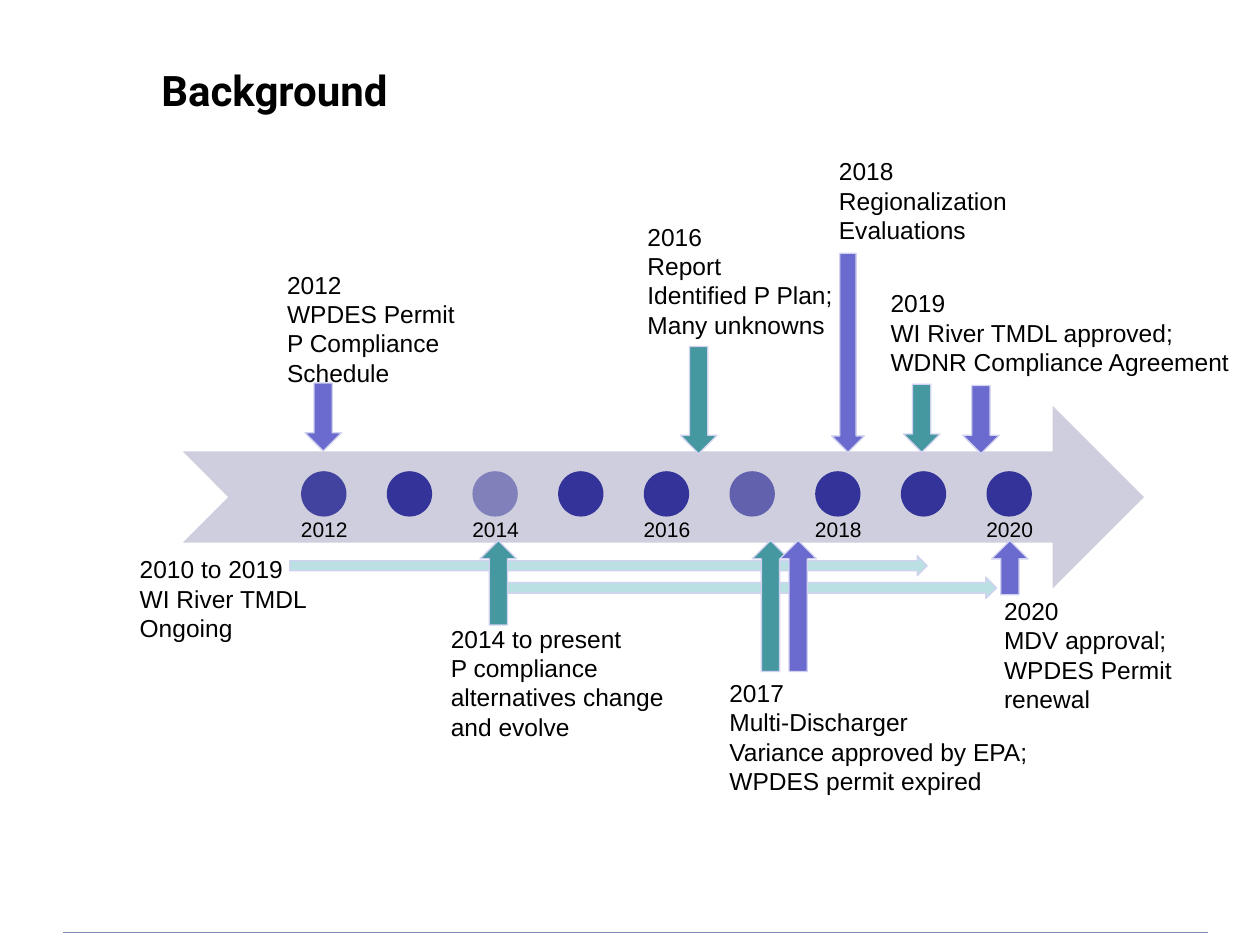
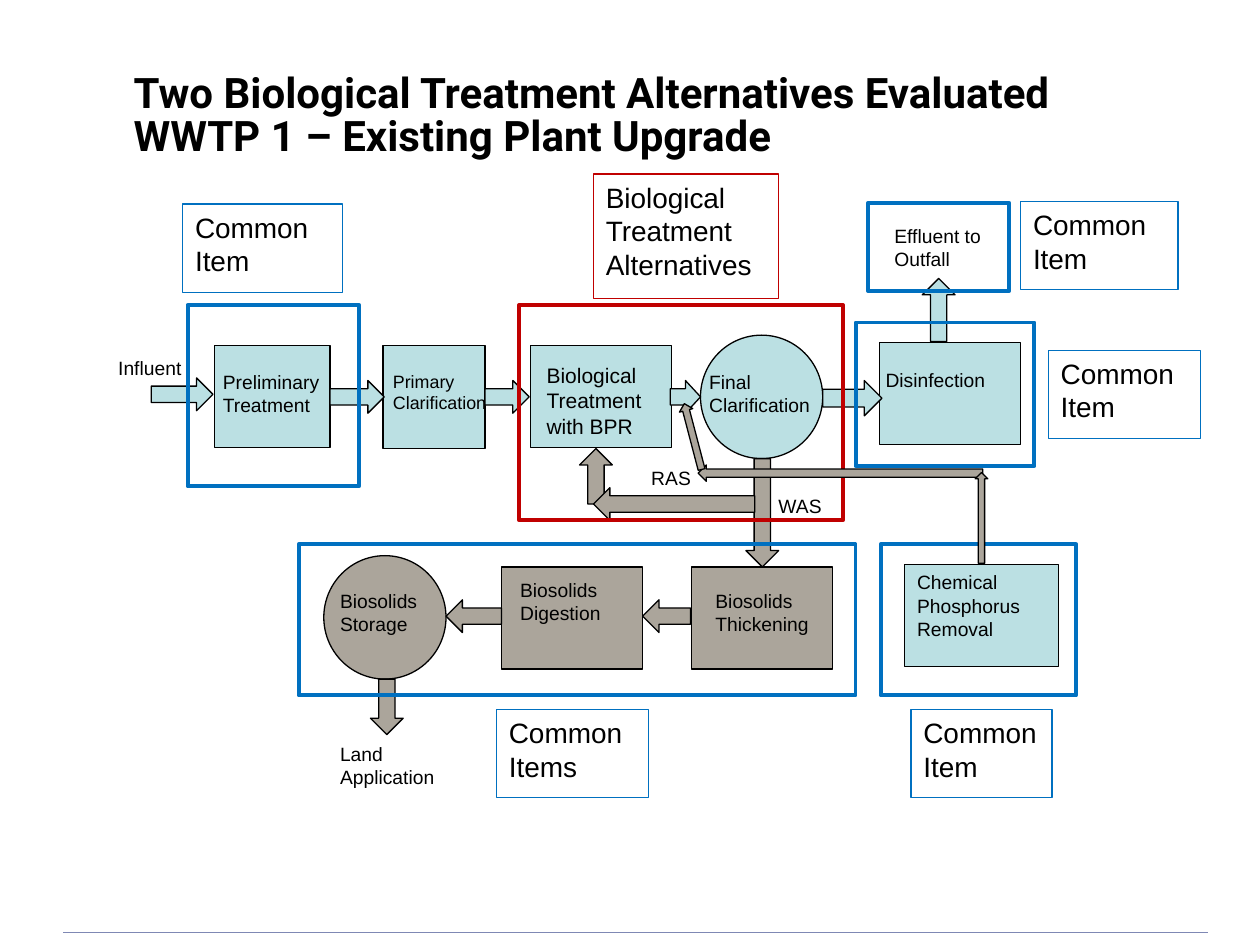
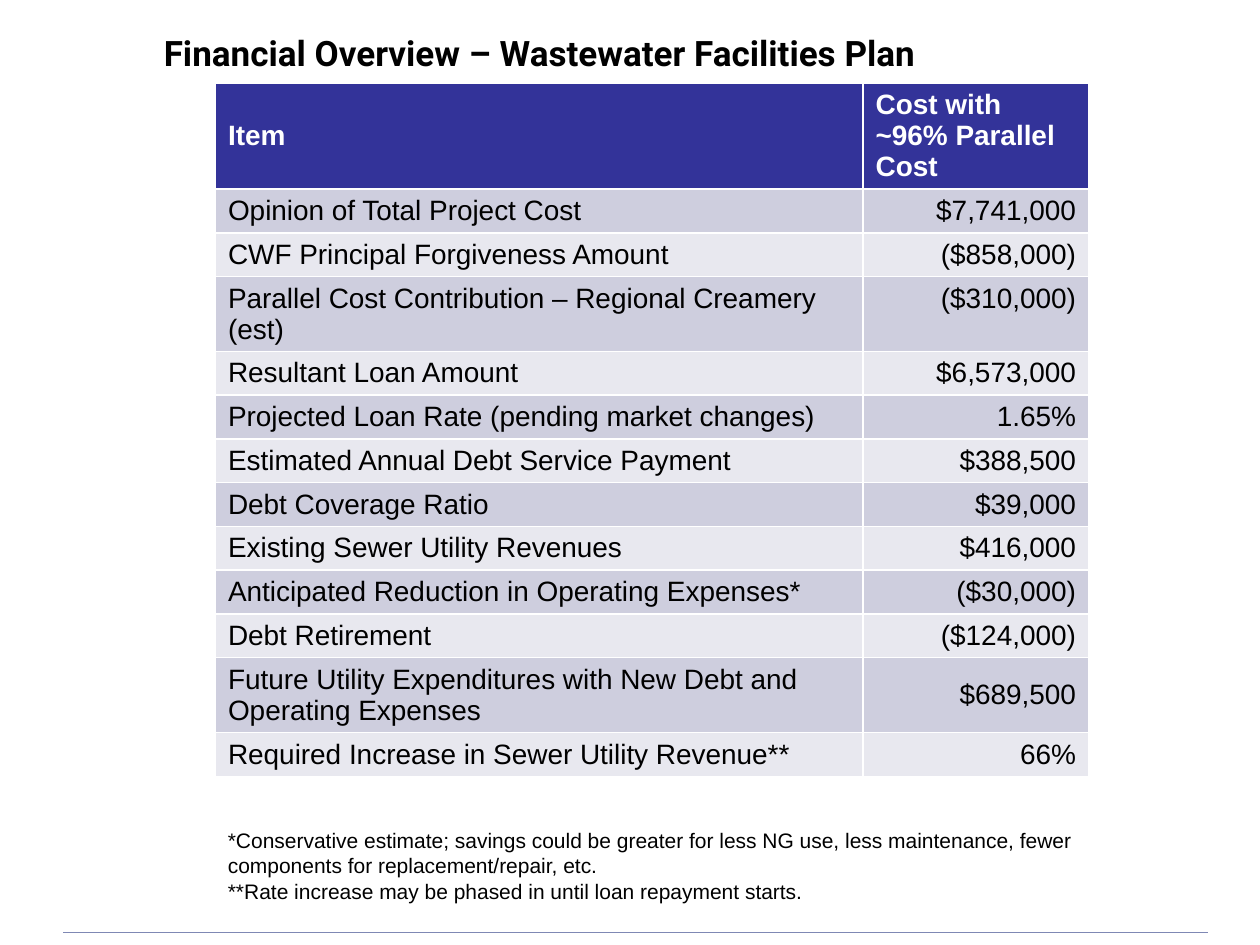
from dataclasses import dataclass

from lxml.etree import SubElement
from pptx import Presentation
from pptx.dml.color import RGBColor
from pptx.enum.shapes import MSO_CONNECTOR, MSO_SHAPE
from pptx.enum.text import MSO_ANCHOR, PP_ALIGN
from pptx.oxml.ns import qn
from pptx.util import Inches, Pt


@dataclass(frozen=True)
class Theme:
    black = RGBColor.from_string("000000")
    white = RGBColor.from_string("FFFFFF")
    navy = RGBColor.from_string("333399")
    violet = RGBColor.from_string("6B6BCF")
    teal = RGBColor.from_string("4597A0")
    aqua = RGBColor.from_string("BBE0E3")
    lavender = RGBColor.from_string("CECEDE")
    pale = RGBColor.from_string("E8E8EF")
    edge = RGBColor.from_string("D1D1F0")
    sludge = RGBColor.from_string("ABA59B")
    blue = RGBColor.from_string("0070C0")
    red = RGBColor.from_string("C00000")
    rule = RGBColor.from_string("7F88B4")
    title_font = "Roboto"
    body_font = "Arial"
    large = 16
    event = 14
    note = 12
    label = 11
    thin = 0.75
    thick = 2.25


theme = Theme()


def write(frame, text, size, wrap=True, color=theme.black, bold=False, align=PP_ALIGN.LEFT):
    frame.word_wrap = wrap
    frame.text = text
    for paragraph in frame.paragraphs:
        paragraph.alignment = align
        for run in paragraph.runs:
            run.font.name = theme.body_font
            run.font.size = Pt(size)
            run.font.bold = bold
            run.font.color.rgb = color


def place(slide, preset, box, fill=None, line=None, width=theme.thin, rotation=0):
    shape = slide.shapes.add_shape(preset, *map(Inches, box))
    shape.shadow.inherit = False
    shape.rotation = rotation
    if fill is None:
        shape.fill.background()
    else:
        shape.fill.solid()
        shape.fill.fore_color.rgb = fill
    if line is None:
        shape.line.fill.background()
    else:
        shape.line.color.rgb = line
        shape.line.width = Pt(width)
    return shape


prs = Presentation()
prs.slide_width, prs.slide_height = Inches(10), Inches(7.5)
title_only = prs.slide_layouts[5]

# Slides and titles
titles = [
    ("Background", (1.18, 0.37, 7.44, 0.74), 24),
    ("Two Biological Treatment Alternatives Evaluated\vWWTP 1 – Existing Plant Upgrade",
     (0.96, 0.56, 8.66, 0.74), 24),
    ("Financial Overview – Wastewater Facilities Plan", (1.2, 0.07, 8.5, 0.74), 20),
]
for heading, box, size in titles:
    title = prs.slides.add_slide(title_only).shapes.title
    title.left, title.top, title.width, title.height = map(Inches, box)
    title.text_frame.vertical_anchor = MSO_ANCHOR.MIDDLE
    title.text_frame.text = heading
    paragraph = title.text_frame.paragraphs[0]
    paragraph.alignment = PP_ALIGN.LEFT
    paragraph.line_spacing = 0.85
    for run in paragraph.runs:
        run.font.name = theme.title_font
        run.font.size = Pt(size)
        run.font.bold = True
        run.font.color.rgb = theme.black
background, treatment, finance = prs.slides

# Footer rule, moved to the shared layout
footer_rule = background.shapes.add_connector(
    MSO_CONNECTOR.STRAIGHT, Inches(0.5), Inches(7.4), Inches(9.59), Inches(7.4))
footer_rule.line.color.rgb = theme.rule
footer_rule.line.width = Pt(0.5)
SubElement(footer_rule.element.spPr, qn("a:effectLst"))
title_only.shapes.element.append(footer_rule.element)

# Background: timeline band with one dot a year and a label every second year
place(background, MSO_SHAPE.NOTCHED_RIGHT_ARROW, (1.45, 3.22, 7.63, 1.45), theme.lavender)
dot_opacity = {2012: 90, 2014: 50, 2017: 70}
for year in range(2012, 2021):
    dot_left = 2.39 + 0.68 * (year - 2012)
    dot = place(background, MSO_SHAPE.OVAL, (dot_left, 3.74, 0.36, 0.36), theme.navy)
    if year in dot_opacity:
        dot_color = next(dot.element.iter(qn("a:srgbClr")))
        SubElement(dot_color, qn("a:alpha"), val=str(dot_opacity[year] * 1000))
    if year % 2 == 0:
        year_label = background.shapes.add_textbox(
            Inches(dot_left - 0.1), Inches(4.05), Inches(0.66), Inches(0.3))
        write(year_label.text_frame, str(year), theme.note)

# Background: long-running periods
for box in [(5.86, 2.7, 0.17, 3.93), (4.75, 1.96, 0.16, 5.06)]:
    place(background, MSO_SHAPE.DOWN_ARROW, box, theme.aqua, theme.edge, rotation=270)

# Background: event arrows, downwards above the band and upwards below it
event_arrows = [
    ((2.42, 3.04, 0.29, 0.54), theme.violet, 0),
    ((5.4, 2.75, 0.29, 0.85), theme.teal, 0),
    ((7.17, 3.05, 0.29, 0.54), theme.teal, 0),
    ((7.64, 3.06, 0.29, 0.54), theme.violet, 0),
    ((6.6, 2.01, 0.26, 1.58), theme.violet, 0),
    ((7.87, 4.29, 0.29, 0.43), theme.violet, 180),
    ((3.81, 4.29, 0.29, 0.67), theme.teal, 180),
    ((5.97, 4.29, 0.29, 1.04), theme.teal, 180),
    ((6.19, 4.29, 0.29, 1.04), theme.violet, 180),
]
for box, color, rotation in event_arrows:
    place(background, MSO_SHAPE.DOWN_ARROW, box, color, theme.edge, rotation=rotation)

# Background: event texts
events = [
    ((2.18, 2.09, 1.6, 1.04), "2012\nWPDES Permit\nP Compliance\nSchedule", False),
    ((5.04, 1.71, 1.68, 1.04), "2016\nReport\nIdentified P Plan;\nMany unknowns", False),
    ((6.56, 1.19, 1.6, 0.81), "2018\nRegionalization\nEvaluations", False),
    ((6.97, 2.24, 2.9, 0.81), "2019\nWI River TMDL approved;\nWDNR Compliance Agreement", False),
    ((1.01, 4.35, 1.58, 0.81), "2010 to 2019\nWI River TMDL\nOngoing", False),
    ((3.48, 4.9, 2, 1.04), "2014 to present\nP compliance\nalternatives change and evolve", True),
    ((5.69, 5.33, 2.58, 1.04),
     "2017\nMulti-Discharger\nVariance approved by EPA;\nWPDES permit expired", False),
    ((7.87, 4.68, 1.68, 1.04), "2020\nMDV approval; WPDES Permit renewal", True),
]
for box, text, wrap in events:
    event = background.shapes.add_textbox(*map(Inches, box))
    write(event.text_frame, text, theme.event, wrap)

# Treatment: process units
units = [
    (MSO_SHAPE.RECTANGLE, (1.7, 2.74, 0.92, 0.81), theme.aqua),
    (MSO_SHAPE.RECTANGLE, (3.04, 2.74, 0.81, 0.82), theme.aqua),
    (MSO_SHAPE.RECTANGLE, (4.21, 2.74, 1.12, 0.81), theme.aqua),
    (MSO_SHAPE.OVAL, (5.56, 2.66, 0.97, 0.98), theme.aqua),
    (MSO_SHAPE.RECTANGLE, (6.98, 2.72, 1.12, 0.81), theme.aqua),
    (MSO_SHAPE.RECTANGLE, (5.49, 4.5, 1.12, 0.81), theme.sludge),
    (MSO_SHAPE.RECTANGLE, (3.98, 4.5, 1.12, 0.81), theme.sludge),
    (MSO_SHAPE.OVAL, (2.57, 4.41, 0.97, 0.98), theme.sludge),
]
for preset, box, color in units:
    place(treatment, preset, box, color, theme.black)

# Treatment: water and solids flows
flows = [
    ((1.2, 3, 0.49, 0.26), theme.aqua, 0),
    ((2.62, 3.02, 0.43, 0.26), theme.aqua, 0),
    ((3.85, 3.02, 0.35, 0.26), theme.aqua, 0),
    ((5.32, 3.02, 0.24, 0.26), theme.aqua, 0),
    ((6.53, 3.02, 0.47, 0.28), theme.aqua, 0),
    ((7.2, 2.33, 0.5, 0.26), theme.aqua, 270),
    ((5.62, 3.94, 0.86, 0.26), theme.sludge, 90),
    ((5.1, 4.76, 0.38, 0.26), theme.sludge, 180),
    ((3.54, 4.76, 0.44, 0.26), theme.sludge, 180),
    ((4.51, 3.65, 0.44, 0.26), theme.sludge, 270),
    ((4.71, 3.87, 1.28, 0.26), theme.sludge, 180),
    ((2.85, 5.48, 0.44, 0.26), theme.sludge, 90),
]
for box, color, rotation in flows:
    place(treatment, MSO_SHAPE.RIGHT_ARROW, box, color, theme.black, rotation=rotation)

# Treatment: unit and flow labels
labels = [
    ((1.67, 2.89, 1.1, 0.51), "Preliminary Treatment", theme.label),
    ((3.02, 2.89, 0.98, 0.51), "Primary\nClarification", 10.2),
    ((4.24, 2.83, 1.1, 0.51), "Biological Treatment with BPR", theme.note),
    ((5.53, 2.89, 1.1, 0.51), "Final Clarification", theme.label),
    ((6.93, 2.87, 1.1, 0.31), "Disinfection", theme.label),
    ((0.84, 2.78, 0.77, 0.31), "Influent", theme.label),
    ((7, 1.73, 0.96, 0.51), "Effluent to Outfall", theme.label),
    ((6.08, 3.87, 0.62, 0.31), "WAS", theme.label),
    ((5.07, 3.65, 0.62, 0.31), "RAS", theme.label),
    ((5.58, 4.63, 1.03, 0.51), "Biosolids\nThickening", theme.label),
    ((4.03, 4.54, 1.14, 0.72), "Biosolids Digestion", theme.label),
    ((2.6, 4.63, 0.95, 0.51), "Biosolids Storage", theme.label),
    ((2.6, 5.84, 1.12, 0.51), "Land Application", theme.label),
]
for box, text, size in labels:
    label = treatment.shapes.add_textbox(*map(Inches, box))
    write(label.text_frame, text, size)

# Treatment: frames around the cost groups
frames = [
    ((1.49, 2.42, 1.36, 1.44), theme.blue),
    ((4.12, 2.42, 2.57, 1.71), theme.red),
    ((6.79, 2.56, 1.42, 1.14), theme.blue),
    ((6.89, 1.61, 1.12, 0.7), theme.blue),
    ((2.37, 4.32, 4.42, 1.2), theme.blue),
    ((6.99, 4.32, 1.55, 1.2), theme.blue),
]
for box, color in frames:
    place(treatment, MSO_SHAPE.RECTANGLE, box, line=color, width=theme.thick)

# Treatment: boxes with their own text
captions = [
    ((1.45, 1.62, 1.27, 0.7), "Common Item", theme.white, theme.blue, theme.large),
    ((4.71, 1.38, 1.47, 0.99), "Biological Treatment Alternatives",
     theme.white, theme.red, theme.large),
    ((8.32, 2.78, 1.21, 0.7), "Common Item", theme.white, theme.blue, theme.large),
    ((3.94, 5.63, 1.21, 0.7), "Common Items", theme.white, theme.blue, theme.large),
    ((8.1, 1.6, 1.25, 0.7), "Common Item", theme.white, theme.blue, theme.large),
    ((7.23, 5.63, 1.12, 0.7), "Common Item", theme.white, theme.blue, theme.large),
    ((7.18, 4.48, 1.22, 0.81), "Chemical Phosphorus Removal",
     theme.aqua, theme.black, theme.label),
]
for box, text, fill, line, size in captions:
    caption = place(treatment, MSO_SHAPE.RECTANGLE, box, fill, line)
    caption.text_frame.vertical_anchor = MSO_ANCHOR.TOP
    write(caption.text_frame, text, size)

# Treatment: chemical feed back to final clarification
chemical_feed = [
    ((5.54, 3.69, 2.26, 0.13), 180),
    ((5.23, 3.41, 0.54, 0.11), 255.3),
    ((7.43, 4.06, 0.72, 0.1), 270),
]
for box, rotation in chemical_feed:
    place(treatment, MSO_SHAPE.RIGHT_ARROW, box, theme.sludge, theme.black, rotation=rotation)

# Finance: cost table
costs = [
    ("Item", "Cost with ~96% Parallel Cost"),
    ("Opinion of Total Project Cost", "$7,741,000"),
    ("CWF Principal Forgiveness Amount", "($858,000)"),
    ("Parallel Cost Contribution – Regional Creamery (est)", "($310,000)"),
    ("Resultant Loan Amount", "$6,573,000"),
    ("Projected Loan Rate (pending market changes)", "1.65%"),
    ("Estimated Annual Debt Service Payment", "$388,500"),
    ("Debt Coverage Ratio", "$39,000"),
    ("Existing Sewer Utility Revenues", "$416,000"),
    ("Anticipated Reduction in Operating Expenses*", "($30,000)"),
    ("Debt Retirement", "($124,000)"),
    ("Future Utility Expenditures with New Debt and Operating Expenses", "$689,500"),
    ("Required Increase in Sewer Utility Revenue**", "66%"),
]
row_heights = {0: 0.84, 3: 0.59, 11: 0.59}
cost_table = finance.shapes.add_table(
    len(costs), 2, Inches(1.71), Inches(0.66), Inches(6.93), Inches(5.83)).table
cost_table.columns[0].width = Inches(5.14)
cost_table.columns[1].width = Inches(1.79)
for row, entry in enumerate(costs):
    cost_table.rows[row].height = Inches(row_heights.get(row, 0.34))
    is_header = row == 0
    band = theme.navy if is_header else theme.lavender if row % 2 else theme.pale
    for column, text in enumerate(entry):
        cell = cost_table.cell(row, column)
        cell.fill.solid()
        cell.fill.fore_color.rgb = band
        is_amount = column == 1 and not is_header
        write(cell.text_frame, text, theme.large,
              color=theme.white if is_header else theme.black, bold=is_header,
              align=PP_ALIGN.RIGHT if is_amount else PP_ALIGN.LEFT)
for row, column in [(0, 0), (11, 1)]:
    cost_table.cell(row, column).vertical_anchor = MSO_ANCHOR.MIDDLE

# Finance: footnotes
footnotes = finance.shapes.add_textbox(Inches(1.71), Inches(6.52), Inches(7.48), Inches(0.71))
write(footnotes.text_frame,
      "*Conservative estimate; savings could be greater for less NG use, less maintenance, "
      "fewer components for replacement/repair, etc.\n"
      "**Rate increase may be phased in until loan repayment starts.", theme.note)

prs.save("out.pptx")
